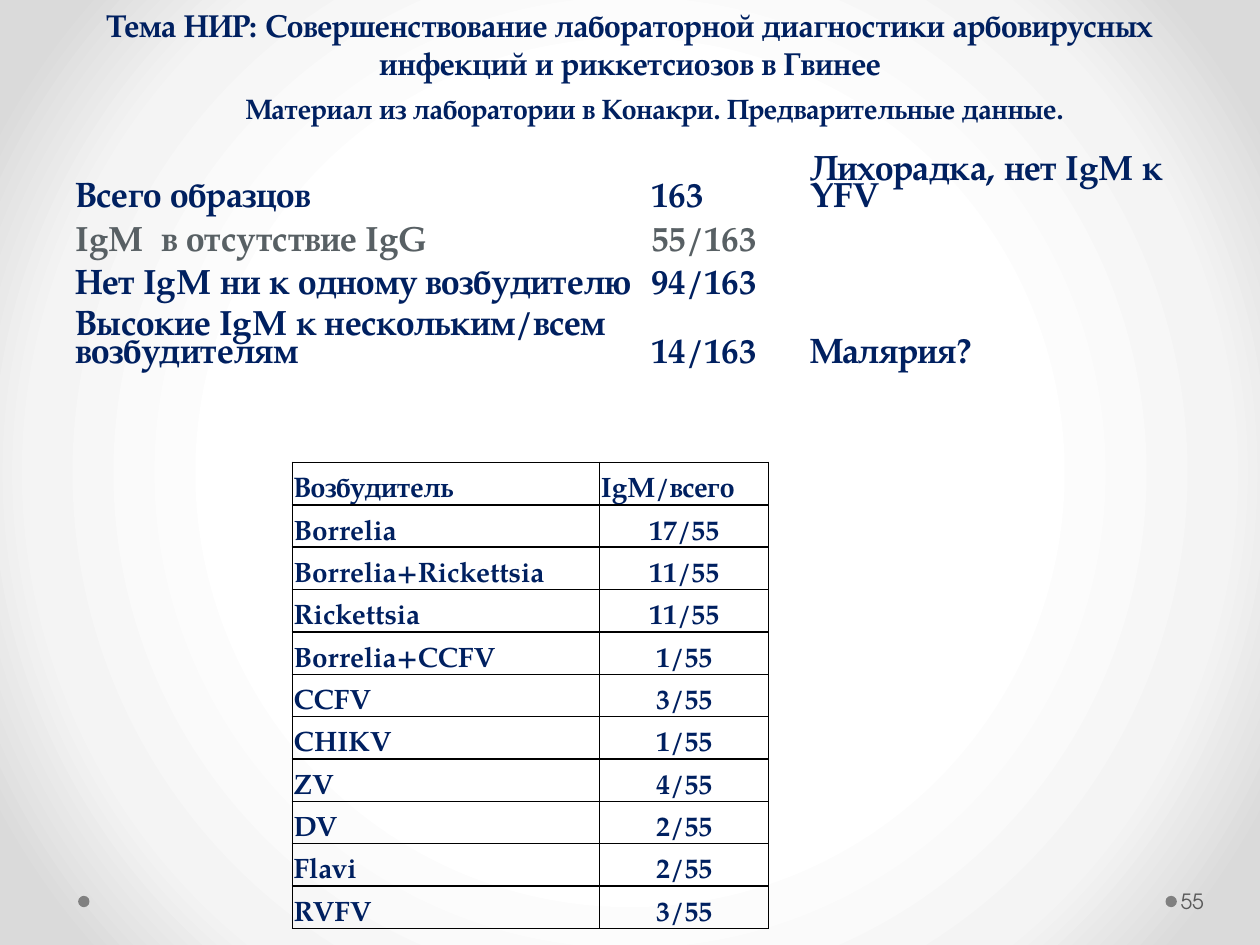
from lxml import etree
from pptx import Presentation
from pptx.dml.color import RGBColor
from pptx.enum.shapes import MSO_SHAPE
from pptx.enum.text import MSO_ANCHOR, PP_ALIGN
from pptx.oxml import parse_xml
from pptx.oxml.ns import qn
from pptx.util import Inches, Pt

OVAL = MSO_SHAPE.OVAL
MIDDLE, BOTTOM = MSO_ANCHOR.MIDDLE, MSO_ANCHOR.BOTTOM
LEFT, CENTER = PP_ALIGN.LEFT, PP_ALIGN.CENTER

NS = "http://schemas.openxmlformats.org/drawingml/2006/main"
NO_STYLE = "{2D5ABB26-0587-4C30-8999-92F81FD0307C}"
SERIF, SANS = "TeX Gyre Pagella", "TeX Gyre Adventor"
COLORS = {
    "navy": "002060",
    "slate": "586064",
    "number": "595959",
    "dot": "808080",
    "border": "000000",
}
BACKGROUND = [(50, "FFFFFF"), (76, "F4F4F4"), (92, "DADADA")]

SAMPLES = [
    ("Всего образцов", "163", "Лихорадка, нет IgM к YFV"),
    ("IgM  в отсутствие IgG", "55/163", ""),
    ("Нет IgM ни к одному возбудителю", "94/163", ""),
    ("Высокие IgM к нескольким/всем возбудителям", "14/163", "Малярия?"),
]
PATHOGENS = [
    ("Возбудитель", "IgM/всего"),
    ("Borrelia", "17/55"),
    ("Borrelia+Rickettsia", "11/55"),
    ("Rickettsia", "11/55"),
    ("Borrelia+CCFV", "1/55"),
    ("CCFV", "3/55"),
    ("CHIKV", "1/55"),
    ("ZV", "4/55"),
    ("DV", "2/55"),
    ("Flavi", "2/55"),
    ("RVFV", "3/55"),
]


def rgb(name):
    return RGBColor.from_string(COLORS[name])


def set_background(s):
    fill = s.background.fill
    fill.gradient()
    stops = "".join(
        f'<a:gs pos="{pos * 1000}"><a:srgbClr val="{color}"/></a:gs>'
        for pos, color in BACKGROUND
    )
    grad = parse_xml(
        f'<a:gradFill xmlns:a="{NS}" rotWithShape="1"><a:gsLst>{stops}</a:gsLst>'
        '<a:path path="circle"><a:fillToRect l="50000" t="50000" r="50000" b="50000"/>'
        "</a:path></a:gradFill>"
    )
    old = s.background._cSld.find(".//" + qn("a:gradFill"))
    old.getparent().replace(old, grad)


def set_text(p, text, size, color="navy", font=SERIF, bold=True, align=LEFT):
    p.text = text
    p.alignment = align
    p.font.size = Pt(size)
    p.font.name = font
    p.font.bold = bold
    p.font.color.rgb = rgb(color)


def add_text(s, box, text, size, **style):
    tf = s.shapes.add_textbox(*map(Inches, box)).text_frame
    tf.word_wrap = True
    set_text(tf.paragraphs[0], text, size, **style)
    return tf


def add_dot(s, left):
    sp = s.shapes.add_shape(OVAL, Inches(left), Inches(7.11), Inches(0.09), Inches(0.09))
    sp.shadow.inherit = False
    sp.fill.solid()
    sp.fill.fore_color.rgb = rgb("dot")
    sp.line.fill.background()


def add_borders(cell):
    tc_pr = cell._tc.get_or_add_tcPr()
    for i, side in enumerate(("lnL", "lnR", "lnT", "lnB")):
        ln = etree.Element(qn(f"a:{side}"), w=str(Pt(1)))
        fill = etree.SubElement(ln, qn("a:solidFill"))
        etree.SubElement(fill, qn("a:srgbClr"), val=COLORS["border"])
        tc_pr.insert(i, ln)


def add_table(s, left, top, widths, heights, rows):
    shape = s.shapes.add_table(
        len(rows), len(widths), Inches(left), Inches(top),
        Inches(sum(widths)), Inches(sum(heights)),
    )
    table = shape.table
    table.first_row = table.horz_banding = False
    table._tbl.tblPr.find(qn("a:tableStyleId")).text = NO_STYLE
    for column, width in zip(table.columns, widths):
        column.width = Inches(width)
    for row, height in zip(table.rows, heights):
        row.height = Inches(height)
    for cell in table.iter_cells():
        cell.fill.background()
        cell.vertical_anchor = BOTTOM
        cell.margin_left = cell.margin_right = cell.margin_top = Inches(0.01)
        cell.margin_bottom = 0
    return table


def add_samples(s):
    table = add_table(s, 0.59, 1.15, [4.57, 1.26, 3.15], [0.28, 0.28, 0.28, 0.51], SAMPLES)
    for i, row in enumerate(SAMPLES):
        for j, text in enumerate(row):
            p = table.cell(i, j).text_frame.paragraphs[0]
            set_text(p, text, 20, color="slate" if i == 1 else "navy")
            p.line_spacing = 0.8


def add_pathogens(s):
    count = len(PATHOGENS)
    table = add_table(s, 2.32, 3.67, [2.44, 1.34], [3.7 / count] * count, PATHOGENS)
    for i, row in enumerate(PATHOGENS):
        for j, text in enumerate(row):
            cell = table.cell(i, j)
            align = CENTER if i and j else LEFT
            set_text(cell.text_frame.paragraphs[0], text, 16, align=align)
            add_borders(cell)


def main():
    prs = Presentation()
    prs.slide_width, prs.slide_height = Inches(10), Inches(7.5)
    s = prs.slides.add_slide(prs.slide_layouts[6])
    set_background(s)
    for left in (9.25, 0.62):
        add_dot(s, left)
    tf = add_text(s, (9.34, 6.95, 0.61, 0.4), "55", 12, color="number", font=SANS, bold=False)
    tf.vertical_anchor = MIDDLE
    tf.margin_left = Inches(0.03)
    tf.margin_right = Inches(0.05)
    add_samples(s)
    add_text(
        s, (0.67, 0, 8.66, 0.71),
        "Тема НИР: Совершенствование лабораторной диагностики арбовирусных "
        "инфекций и риккетсиозов в Гвинее",
        18, align=CENTER,
    )
    add_pathogens(s)
    add_text(
        s, (0.91, 0.68, 8.58, 0.37),
        "Материал из лаборатории в Конакри. Предварительные данные.",
        16, align=CENTER,
    )
    prs.save("out.pptx")


if __name__ == "__main__":
    main()
